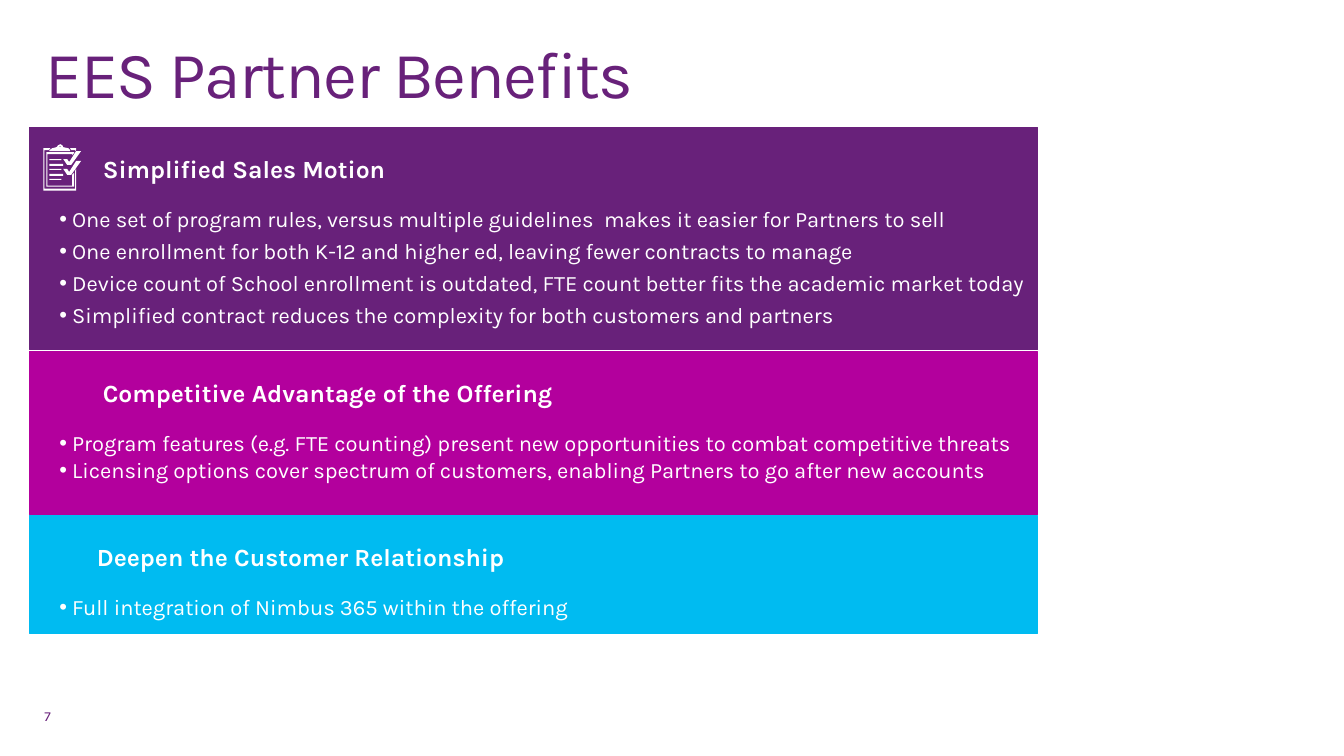
from lxml.etree import SubElement
from pptx import Presentation
from pptx.dml.color import RGBColor
from pptx.enum.text import MSO_ANCHOR as Anchor, MSO_AUTO_SIZE as AutoSize, PP_ALIGN as Align
from pptx.oxml.ns import qn
from pptx.util import Inches, Pt

PURPLE, MAGENTA, CYAN, WHITE = "68217A", "B3009D", "00BBF1", "FFFFFF"

# Placeholder index, top, height, colour, heading indent, gap after bullets, heading, bullets
BENEFITS = [
    (1, 1.29, 2.25, PURPLE, 0.44, 6, "Simplified Sales Motion", [
        "One set of program rules, versus multiple guidelines  makes it easier for Partners to sell",
        "One enrollment for both K-12 and higher ed, leaving fewer contracts to manage",
        "Device count of School enrollment is outdated, FTE count better fits the academic market today",
        "Simplified contract reduces the complexity for both customers and partners"]),
    (2, 3.56, 1.65, MAGENTA, 0.44, 2.4, "Competitive Advantage of the Offering", [
        "Program features (e.g. FTE counting) present new opportunities to combat competitive threats",
        "Licensing options cover spectrum of customers, enabling Partners to go after new accounts"]),
    (3, 5.22, 1.19, CYAN, 0.38, 6, "Deepen the Customer Relationship", [
        "Full integration of Nimbus 365 within the offering"]),
]

# Clipboard outlines, in hundredths of an inch
PAGE_EDGE = [(76, 191), (45, 191), (45, 152), (49, 152), (51, 150), (44, 150),
             (44, 193), (77, 193), (77, 171), (76, 173)]
PAGE_INSIDE = [(73, 188), (48, 188), (48, 156), (73, 156), (73, 157), (75, 155),
               (75, 154), (47, 154), (47, 189), (75, 189), (75, 175), (73, 177)]
PAGE_CORNER = [(77, 152), (77, 150), (71, 150), (72, 152), (76, 152), (76, 153)]
CLIP = [(50, 153), (50, 152), (53, 150), (57, 149), (59, 147), (61, 146), (63, 147),
        (64, 149), (69, 150), (71, 152), (71, 153)]
CLIP_HOLE = [(59, 149), (61, 148), (62, 149)]
TICK = [(82, 153), (72, 167), (68, 167), (64, 161), (68, 161), (70, 164), (77, 153)]
WRITING = [(161, 62), (166, 64), (171, 62), (176, 64), (181, 62)]


def color(hex_code):
    return RGBColor.from_string(hex_code)


def apply(target, values):
    for name, value in values.items():
        setattr(target, name, value)


class BenefitsSlide:
    font = "Karla"
    paragraph_style = {"alignment": Align.LEFT, "line_spacing": 0.9, "space_before": Pt(0)}

    def __init__(self, deck, layout):
        self.slide = deck.slides.add_slide(deck.slide_layouts[layout])

    def place(self, shape, left, top, width, height):
        apply(shape, {"left": Inches(left), "top": Inches(top),
                      "width": Inches(width), "height": Inches(height)})

    def frame(self, shape, insets, anchor=Anchor.TOP):
        sides = ("margin_left", "margin_top", "margin_right", "margin_bottom")
        apply(shape.text_frame, {"word_wrap": True, "auto_size": AutoSize.NONE,
                                 "vertical_anchor": anchor})
        apply(shape.text_frame, {side: Inches(inset) for side, inset in zip(sides, insets)})
        return shape.text_frame

    def add_text(self, paragraph, text, size, ink, bold=False, after=0):
        run = paragraph.add_run()
        run.text = text
        apply(run.font, {"name": self.font, "size": Pt(size), "bold": bold})
        run.font.color.rgb = color(ink)
        apply(paragraph, {**self.paragraph_style, "space_after": Pt(after)})
        return run

    def indent(self, paragraph, margin, first=0, bullet=None):
        props = paragraph._p.get_or_add_pPr()
        props.set("marL", str(Inches(margin)))
        props.set("indent", str(Inches(first)))
        if bullet:
            SubElement(props, qn("a:buFont")).set("typeface", "Arial")
            SubElement(props, qn("a:buChar")).set("char", bullet)
        else:
            SubElement(props, qn("a:buNone"))

    def title(self, text):
        title = self.slide.shapes.title
        self.place(title, 0.3, 0.32, 13, 1)
        frame = self.frame(title, (0.16, 0.1, 0.16, 0.1))
        run = self.add_text(frame.paragraphs[0], text, 48, PURPLE)
        run.font._element.set("spc", "-100")

    def panel(self, index, top, height, fill, heading_indent, gap, heading, bullets):
        panel = self.slide.placeholders[index]
        self.place(panel, 0.3, top, 10.2, height)
        panel.fill.solid()
        panel.fill.fore_color.rgb = color(fill)
        panel.line.color.rgb = color(fill)
        panel.line.width = Pt(0.75)
        frame = self.frame(panel, (0.3, 0.3, 0.1, 0.1))
        self.add_text(frame.paragraphs[0], heading, 18, WHITE, bold=True, after=18)
        self.indent(frame.paragraphs[0], heading_indent)
        for benefit in bullets:
            item = frame.add_paragraph()
            item.level = 1
            self.add_text(item, benefit, 16, WHITE, after=gap)
            self.indent(item, 0.13, -0.13, "•")

    def outline(self, contours, fill):
        builder = self.slide.shapes.build_freeform(*contours[0][0], scale=Inches(0.01))
        for number, (start, *rest) in enumerate(contours):
            if number:
                builder.move_to(*start)
            builder.add_line_segments(rest, close=True)
        icon = builder.convert_to_shape()
        icon.shadow.inherit = False
        icon.fill.solid()
        icon.fill.fore_color.rgb = color(fill)
        icon.line.fill.background()

    def page_number(self, text):
        box = self.slide.shapes.add_textbox(Inches(0.35), Inches(7.05), Inches(0.39), Inches(0.41))
        frame = self.frame(box, (0.1, 0.05, 0.1, 0.05), Anchor.MIDDLE)
        self.add_text(frame.paragraphs[0], text, 10, PURPLE)

    def remove_empty(self):
        for holder in list(self.slide.placeholders):
            if not holder.text_frame.text:
                holder._element.getparent().remove(holder._element)


def main():
    deck = Presentation()
    apply(deck, {"slide_width": Inches(13.6), "slide_height": Inches(7.65)})
    page = BenefitsSlide(deck, layout=4)

    # Title and benefit panels
    page.title("EES Partner Benefits")
    for benefit in BENEFITS:
        page.panel(*benefit)

    # Clipboard with two ticks
    writing = [[(50, y), (right, y), (right, y + 1.5), (50, y + 1.5)] for y, right in WRITING]
    ticks = [[(x, y + drop) for x, y in TICK] for drop in (0, 10)]
    page.outline([PAGE_EDGE, PAGE_INSIDE, PAGE_CORNER, CLIP, CLIP_HOLE, *writing, *ticks], WHITE)

    # Page number
    page.page_number("7")
    page.remove_empty()
    deck.save("out.pptx")


if __name__ == "__main__":
    main()
